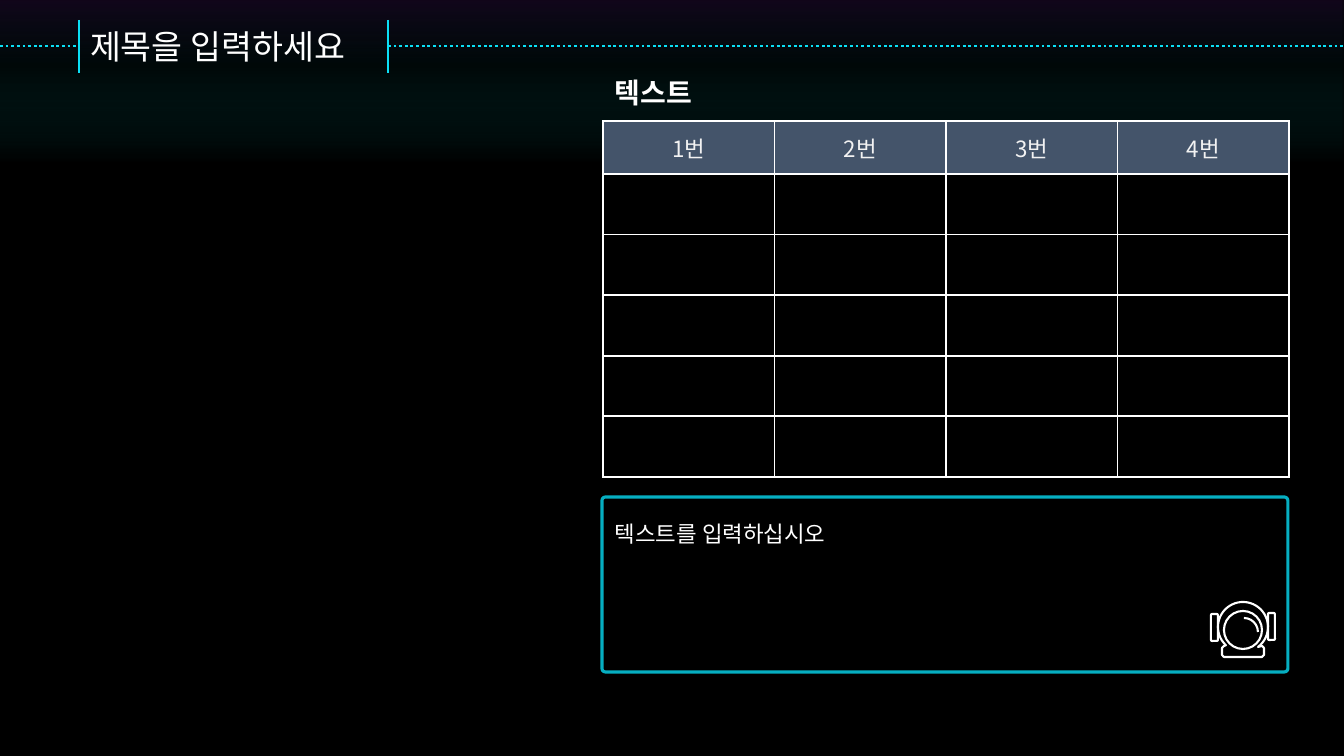
from math import cos, radians, sin

from lxml.etree import SubElement
from pptx import Presentation
from pptx.dml.color import RGBColor
from pptx.enum.dml import MSO_LINE
from pptx.enum.shapes import MSO_CONNECTOR, MSO_SHAPE
from pptx.enum.text import MSO_ANCHOR, MSO_AUTO_SIZE, PP_ALIGN
from pptx.oxml import parse_xml
from pptx.oxml.ns import nsdecls, qn
from pptx.util import Emu, Pt

PAGE_WIDTH, PAGE_HEIGHT = 1344, 756
SCALE = 12192000 / PAGE_WIDTH
FONT = "Noto Sans CJK KR"

BLACK = RGBColor(0x00, 0x00, 0x00)
WHITE = RGBColor(0xFF, 0xFF, 0xFF)
PALE = RGBColor(0xF2, 0xF2, 0xF2)
SLATE = RGBColor(0x44, 0x54, 0x6A)
CYAN = RGBColor(0x0B, 0xDF, 0xF5)
TEAL = RGBColor(0x06, 0xAE, 0xC1)
PURPLE = RGBColor(0x3F, 0x16, 0x5E)
DEEP_GREEN = RGBColor(0x00, 0x3E, 0x3E)

# Position, colour and opacity, each share in percent
GLOW_STOPS = [(0, PURPLE, 29), (9, DEEP_GREEN, 14), (22, BLACK, 89)]


def px(length):
    return Emu(round(length * SCALE))


def place(box):
    return [px(length) for length in box]


def write(frame, text, size, color, bold=False, align=PP_ALIGN.LEFT):
    para = frame.paragraphs[0]
    para.alignment = align
    span = para.add_run()
    span.text = text
    font = span.font
    font.size, font.bold, font.name = Pt(size), bold, FONT
    font.color.rgb = color
    SubElement(font._element, qn("a:ea"), typeface=FONT)


def add_label(page, box, text, size, bold=False, wrap=True):
    frame = page.shapes.add_textbox(*place(box)).text_frame
    frame.word_wrap = wrap
    frame.auto_size = MSO_AUTO_SIZE.SHAPE_TO_FIT_TEXT
    write(frame, text, size, WHITE, bold)


def outline(shape, color, width):
    shape.shadow.inherit = False
    shape.fill.background()
    shape.line.color.rgb = color
    shape.line.width = Pt(width)


def add_line(page, start, end, width, dash=None):
    line = page.shapes.add_connector(MSO_CONNECTOR.STRAIGHT, *place(start + end))
    line.line.color.rgb = CYAN
    line.line.width = Pt(width)
    if dash:
        line.line.dash_style = dash
    SubElement(line._element.spPr, qn("a:effectLst"))


def add_backdrop(page, box):
    page.background.fill.solid()
    page.background.fill.fore_color.rgb = BLACK
    glow = page.shapes.add_shape(MSO_SHAPE.RECTANGLE, *place(box))
    glow.shadow.inherit = False
    glow.line.fill.background()
    glow.fill.gradient()
    glow.fill.gradient_angle = 270
    stops = glow._element.spPr.find(qn("a:gradFill")).find(qn("a:gsLst"))
    stops.clear()
    for position, color, opacity in GLOW_STOPS:
        stop = SubElement(stops, qn("a:gs"), pos=str(position * 1000))
        paint = SubElement(stop, qn("a:srgbClr"), val=str(color))
        SubElement(paint, qn("a:alpha"), val=str(opacity * 1000))
    # Behind the title placeholder
    page.shapes._spTree.insert(2, glow._element)


def add_title_bar(page, box, text):
    left, top, width, height = box
    right, middle = left + width, top + 26
    for x in (left, right):
        add_line(page, (x, top), (x, top + height), 1.5)
    for start, end in ((0, left), (right, PAGE_WIDTH)):
        add_line(page, (start, middle), (end, middle), 2, MSO_LINE.ROUND_DOT)
    title = page.shapes.title
    title.left, title.top, title.width, title.height = place(
        (left + 1, top + 1, width - 6, height - 2))
    frame = title.text_frame
    frame.word_wrap = False
    frame.auto_size = MSO_AUTO_SIZE.NONE
    frame.vertical_anchor = MSO_ANCHOR.MIDDLE
    write(frame, text, 24, WHITE)


def set_borders(cell, widths):
    properties = cell._tc.get_or_add_tcPr()
    for index, (side, width) in enumerate(zip("LRTB", widths)):
        properties.insert(index, parse_xml(
            f'<a:ln{side} {nsdecls("a")} w="{Pt(width)}"><a:solidFill>'
            f'<a:srgbClr val="{WHITE}"/></a:solidFill></a:ln{side}>'))


def add_grid(page, box, headings, body_rows, header_height):
    last = len(headings) - 1
    table = page.shapes.add_table(body_rows + 1, len(headings), *place(box)).table
    table.first_row = table.horz_banding = False
    for column in table.columns:
        column.width = px(box[2] / len(headings))
    for number, row in enumerate(table.rows):
        row.height = px((box[3] - header_height) / body_rows if number else header_height)
        for index, cell in enumerate(row.cells):
            cell.fill.solid()
            cell.fill.fore_color.rgb = BLACK if number else SLATE
            widths = [1.5] * 4
            if number == 0:
                widths = [1 if index == 0 else 1.5, 1 if index == last else 1.5, 1, 1.5]
                cell.vertical_anchor = MSO_ANCHOR.MIDDLE
                write(cell.text_frame, headings[index], 16, PALE, align=PP_ALIGN.CENTER)
            set_borders(cell, widths)


def add_helmet(page, box):
    left, top, width, height = box
    icon = page.shapes.add_group_shape().shapes
    # Round shell standing on a base with cut corners
    center, radius = left + width / 2, 25
    shell = [(center + radius * cos(radians(angle)), top + radius + radius * sin(radians(angle)))
             for angle in range(53, -234, -7)]
    neck, bottom = top + 44, top + height
    half_base = [(19, neck), (21, neck + 2), (21, bottom - 2), (19, bottom)]
    base = [(center - x, y) for x, y in half_base]
    base += [(center + x, y) for x, y in reversed(half_base)]
    points = [place(point) for point in shell + base]
    builder = icon.build_freeform(*points[0])
    builder.add_line_segments(points[1:], close=True)
    outline(builder.convert_to_shape(), WHITE, 1.5)
    # Ear pieces, visor and its glint
    parts = [
        (MSO_SHAPE.ROUNDED_RECTANGLE, (left + width - 7, top + 11, 7, 27)),
        (MSO_SHAPE.ROUNDED_RECTANGLE, (left, top + 12, 7, 27)),
        (MSO_SHAPE.OVAL, (center - 19, top + 9, 38, 38)),
        (MSO_SHAPE.ARC, (center - 13, top + 16, 28, 28)),
    ]
    for kind, part_box in parts:
        outline(icon.add_shape(kind, *place(part_box)), WHITE, 1.5)


def add_note(page, box, text):
    left, top, width, height = box
    panel = page.shapes.add_shape(MSO_SHAPE.ROUNDED_RECTANGLE, *place(box))
    panel.adjustments[0] = 0.02
    outline(panel, TEAL, 2.25)
    add_label(page, (left + 3, top + 18, width - 43, 37), text, 16)
    add_helmet(page, (left + width - 77, top + 105, 64, 55))


def main():
    deck = Presentation()
    deck.slide_width, deck.slide_height = px(PAGE_WIDTH), px(PAGE_HEIGHT)
    page = deck.slides.add_slide(deck.slide_layouts[5])
    add_backdrop(page, (0, 0, PAGE_WIDTH, PAGE_HEIGHT))
    add_title_bar(page, (79, 20, 309, 53), "제목을 입력하세요")
    add_label(page, (605, 71, 105, 44), "텍스트", 20, bold=True, wrap=False)
    add_grid(page, (603, 121, 686, 356), ["1번", "2번", "3번", "4번"], 5, 53)
    add_note(page, (602, 497, 686, 175), "텍스트를 입력하십시오")
    deck.save("out.pptx")


if __name__ == "__main__":
    main()
